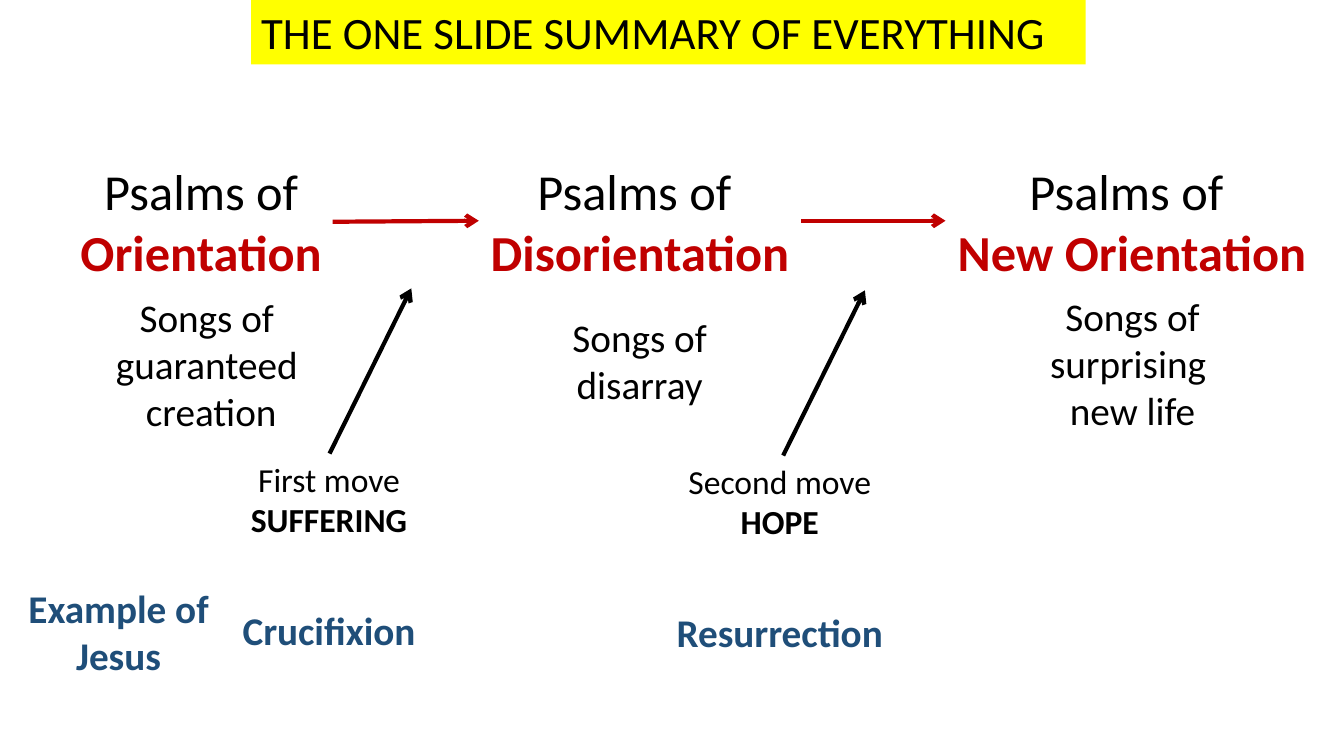
from lxml.etree import SubElement
from pptx import Presentation
from pptx.dml.color import RGBColor
from pptx.enum.shapes import MSO_CONNECTOR as Connector
from pptx.enum.text import MSO_ANCHOR as Anchor, MSO_AUTO_SIZE as AutoSize, PP_ALIGN as Align
from pptx.oxml.ns import qn
from pptx.util import Pt

BLACK, RED, BLUE, YELLOW = "000000", "C00000", "1F4E79", "FFFF00"


def rgb(value):
    return RGBColor.from_string(value)


class Deck:
    font = "Calibri"
    line_width = 3

    def __init__(self, width, height):
        self.prs = Presentation()
        self.prs.slide_width, self.prs.slide_height = Pt(width), Pt(height)
        self.s = None

    def add_slide(self):
        self.s = self.prs.slides.add_slide(self.prs.slide_layouts[5])

    def style(self, r, size, color, bold=False):
        r.font.name, r.font.size, r.font.bold = self.font, Pt(size), bold
        r.font.color.rgb = rgb(color)

    def title(self, text, x, y, w, h, size, fill):
        sp = self.s.shapes.title
        sp.left, sp.top, sp.width, sp.height = Pt(x), Pt(y), Pt(w), Pt(h)
        sp.fill.solid()
        sp.fill.fore_color.rgb = rgb(fill)
        tf = sp.text_frame
        tf.text = text
        tf.word_wrap, tf.auto_size = False, AutoSize.NONE
        tf.vertical_anchor = Anchor.TOP
        p = tf.paragraphs[0]
        p.alignment = Align.LEFT
        self.style(p.runs[0], size, BLACK)

    def text(self, lines, x, y, w, h, size, color=BLACK, bold=False, last=None, wrap=True):
        tf = self.s.shapes.add_textbox(Pt(x), Pt(y), Pt(w), Pt(h)).text_frame
        tf.word_wrap, tf.auto_size = wrap, AutoSize.SHAPE_TO_FIT_TEXT
        p = tf.paragraphs[0]
        p.text = "\v".join(lines)
        p.alignment = Align.CENTER
        for r in p.runs:
            self.style(r, size, color, bold)
        if last:
            self.style(p.runs[-1], size, last, True)

    def arrow(self, x1, y1, x2, y2, color):
        c = self.s.shapes.add_connector(Connector.STRAIGHT, Pt(x1), Pt(y1), Pt(x2), Pt(y2))
        c.line.width = Pt(self.line_width)
        c.line.color.rgb = rgb(color)
        SubElement(c.line._get_or_add_ln(), qn("a:tailEnd"), type="arrow")
        SubElement(c._element.spPr, qn("a:effectLst"))


def main():
    deck = Deck(960, 540)
    deck.add_slide()
    deck.title("THE ONE SLIDE SUMMARY OF EVERYTHING", 179.3, 0, 596.2, 46.1, 32, YELLOW)

    for lines, x, w in [
        (["Psalms of", "Orientation"], 49, 189.4),
        (["Psalms of ", "Disorientation"], 342, 230.4),
        (["Psalms of ", "New Orientation"], 675.4, 266.4),
    ]:
        deck.text(lines, x, 110.9, w, 94.3, 36, last=RED, wrap=False)

    deck.arrow(237.6, 158.4, 342, 157.7, RED)
    deck.arrow(572.4, 157.7, 675.4, 157.7, RED)

    for lines, x, y, w, h, wrap in [
        (["Songs of ", "guaranteed ", "creation"], 74.9, 205.9, 151.9, 108.7, False),
        (["Songs of", "disarray"], 356.4, 220.3, 200.9, 74.9, True),
        (["Songs of", "surprising ", "new life"], 699.1, 205.2, 219.6, 108.7, True),
    ]:
        deck.text(lines, x, y, w, h, 28, wrap=wrap)

    for move, theme, example, x, y, arrow_x in [
        ("First move", "SUFFERING", "Crucifixion", 134.6, 324, 235.4),
        ("Second move", "HOPE", "Resurrection", 456.5, 325.4, 559.4),
    ]:
        deck.text([move, theme], x, y, 200.9, 65.5, 24, last=BLACK)
        deck.arrow(arrow_x, y, arrow_x + 58.4, y - 118, BLACK)
        deck.text([example], x, y + 105.5, 200.9, 41, 28, BLUE, True)

    deck.text(["Example of", "Jesus"], 9.4, 414, 150.5, 74.9, 28, BLUE, True)
    deck.prs.save("out.pptx")


if __name__ == "__main__":
    main()
